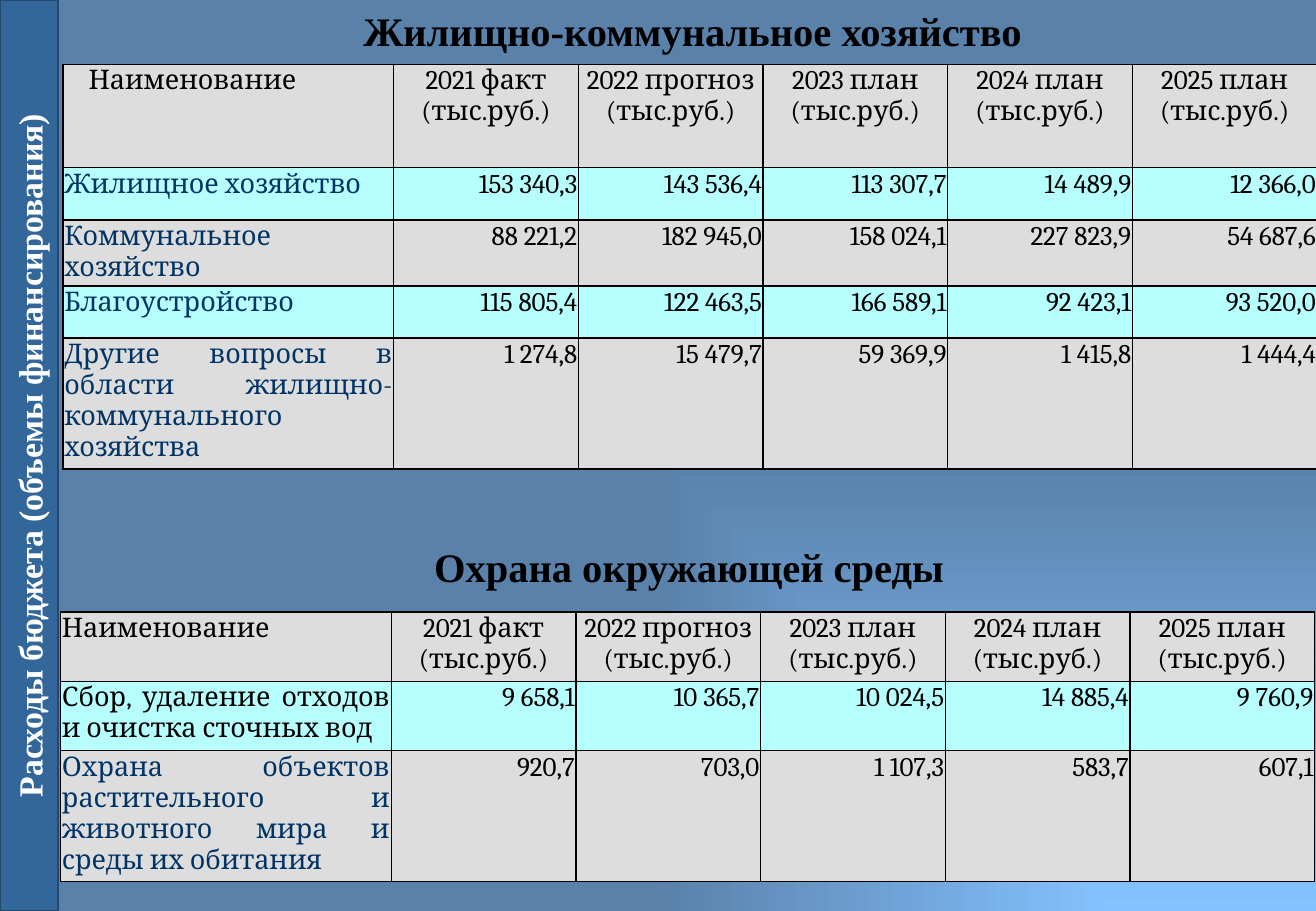
from pptx import Presentation
from pptx.dml.color import RGBColor
from pptx.enum.shapes import MSO_SHAPE
from pptx.enum.text import MSO_ANCHOR, MSO_AUTO_SIZE, PP_ALIGN
from pptx.oxml import parse_xml
from pptx.oxml.ns import nsdecls
from pptx.util import Inches, Pt

LEFT, CENTER, RIGHT, JUSTIFY = (
    PP_ALIGN.LEFT, PP_ALIGN.CENTER, PP_ALIGN.RIGHT, PP_ALIGN.JUSTIFY)
MIDDLE = MSO_ANCHOR.MIDDLE
GROW = MSO_AUTO_SIZE.SHAPE_TO_FIT_TEXT
RECTANGLE = MSO_SHAPE.RECTANGLE
TITLE_ONLY = 5

COLORS = {
    "glow": "85C2FF", "back": "5981AA", "band": "336699", "band_line": "23496F",
    "gray": "DDDDDD", "aqua": "B7FFFF", "navy": "003366",
    "black": "000000", "white": "FFFFFF",
}
HEADING_FONT, TABLE_FONT = "Times New Roman", "Cambria"
COLUMN_WIDTHS = [2.72] + [1.52] * 5
HEADER = ["Наименование", "2021 факт (тыс.руб.)", "2022 прогноз\n(тыс.руб.)"] + [
    f"{year} план (тыс.руб.)" for year in (2023, 2024, 2025)]

HOUSING = [
    ["Жилищное хозяйство", "153 340,3", "143 536,4", "113 307,7", "14 489,9", "12 366,0"],
    ["Коммунальное хозяйство", "88 221,2", "182 945,0", "158 024,1", "227 823,9", "54 687,6"],
    ["Благоустройство", "115 805,4", "122 463,5", "166 589,1", "92 423,1", "93 520,0"],
    ["Другие вопросы в области жилищно-коммунального хозяйства",
     "1 274,8", "15 479,7", "59 369,9", "1 415,8", "1 444,4"],
]
ENVIRONMENT = [
    ["Сбор, удаление отходов и очистка сточных вод",
     "9 658,1", "10 365,7", "10 024,5", "14 885,4", "9 760,9"],
    ["Охрана объектов растительного и животного мира и среды их обитания",
     "920,7", "703,0", "1 107,3", "583,7", "607,1"],
]


def rgb(name):
    return RGBColor.from_string(COLORS[name])


class BudgetSlide:
    def __init__(self, deck):
        self.page = deck.slides.add_slide(deck.slide_layouts[TITLE_ONLY])

    def background(self):
        """Gradient that glows from the bottom right corner."""
        self.page._element.cSld.insert(0, parse_xml(
            f'<p:bg {nsdecls("p", "a")}><p:bgPr><a:gradFill rotWithShape="1"><a:gsLst>'
            f'<a:gs pos="0"><a:srgbClr val="{COLORS["glow"]}"><a:alpha val="29000"/>'
            f'</a:srgbClr></a:gs>'
            f'<a:gs pos="100000"><a:srgbClr val="{COLORS["back"]}"/></a:gs></a:gsLst>'
            '<a:path path="rect"><a:fillToRect l="100000" t="100000"/></a:path>'
            '</a:gradFill><a:effectLst/></p:bgPr></p:bg>'))

    def add_text(self, frame, text, size, font, color, align, bold=False):
        for index, line in enumerate(text.split("\n")):
            para = frame.add_paragraph() if index else frame.paragraphs[0]
            para.alignment = align
            span = para.add_run()
            span.text = line
            span.font.size = Pt(size)
            span.font.name = font
            span.font.bold = bold
            span.font.color.rgb = rgb(color)

    def side_band(self, text, left, top, width, height):
        band = self.page.shapes.add_shape(
            RECTANGLE, Inches(left), Inches(top), Inches(width), Inches(height))
        band.rotation = 270
        band.shadow.inherit = False
        band.fill.solid()
        band.fill.fore_color.rgb = rgb("band")
        band.line.color.rgb = rgb("band_line")
        band.line.width = Pt(1)
        band.text_frame.vertical_anchor = MIDDLE
        self.add_text(band.text_frame, text, 20, HEADING_FONT, "white", CENTER, True)

    def heading(self, box, text, left, top):
        box.left, box.top = Inches(left), Inches(top)
        box.width, box.height = Inches(9.78), Inches(0.5)
        frame = box.text_frame
        frame.word_wrap = True
        frame.auto_size = GROW
        frame.vertical_anchor = MIDDLE
        self.add_text(frame, text, 24, HEADING_FONT, "black", CENTER, True)

    def title(self, text, left, top):
        self.heading(self.page.shapes.title, text, left, top)

    def subtitle(self, text, left, top):
        box = self.page.shapes.add_textbox(0, 0, 0, 0)
        self.heading(box, text, left, top)

    def borders(self, cell):
        properties = cell._tc.get_or_add_tcPr()
        for index, side in enumerate(("lnL", "lnR", "lnT", "lnB")):
            properties.insert(index, parse_xml(
                f'<a:{side} {nsdecls("a")} w="12700"><a:solidFill>'
                f'<a:srgbClr val="{COLORS["black"]}"/></a:solidFill></a:{side}>'))

    def cell(self, cell, text, align, color, fill, indent=0.01):
        cell.margin_left = Inches(indent)
        cell.margin_right = cell.margin_top = Inches(0.01)
        cell.margin_bottom = 0
        cell.fill.solid()
        cell.fill.fore_color.rgb = rgb(fill)
        self.borders(cell)
        self.add_text(cell.text_frame, text, 16, TABLE_FONT, color, align)

    def table(self, rows, left, top, heights, name_colors, header_indent=0.01):
        grid = self.page.shapes.add_table(
            len(heights), len(COLUMN_WIDTHS), Inches(left), Inches(top),
            Inches(sum(COLUMN_WIDTHS)), Inches(sum(heights))).table
        for column, width in zip(grid.columns, COLUMN_WIDTHS):
            column.width = Inches(width)
        for row, height in zip(grid.rows, heights):
            row.height = Inches(height)
        for c, label in enumerate(HEADER):
            self.cell(grid.cell(0, c), label, CENTER if c else LEFT, "black", "gray",
                      0.01 if c else header_indent)
        for r, (values, name_color) in enumerate(zip(rows, name_colors), start=1):
            fill = "aqua" if r % 2 else "gray"
            for c, value in enumerate(values):
                self.cell(grid.cell(r, c), value, RIGHT if c else JUSTIFY,
                          "black" if c else name_color, fill)


def main():
    deck = Presentation()
    deck.slide_width, deck.slide_height = Inches(10.83), Inches(7.5)
    slide = BudgetSlide(deck)
    slide.background()
    slide.side_band("Расходы бюджета (объемы финансирования)", -3.51, 3.51, 7.5, 0.48)
    slide.title("Жилищно-коммунальное хозяйство", 0.81, 0)
    slide.subtitle("Охрана окружающей среды", 0.78, 4.41)
    slide.table(HOUSING, 0.52, 0.53, [0.85, 0.43, 0.43, 0.43, 0.97],
                ["navy"] * 4, header_indent=0.21)
    slide.table(ENVIRONMENT, 0.5, 5.04, [0.57, 0.57, 0.85], ["black", "navy"])
    deck.save("out.pptx")


if __name__ == "__main__":
    main()
